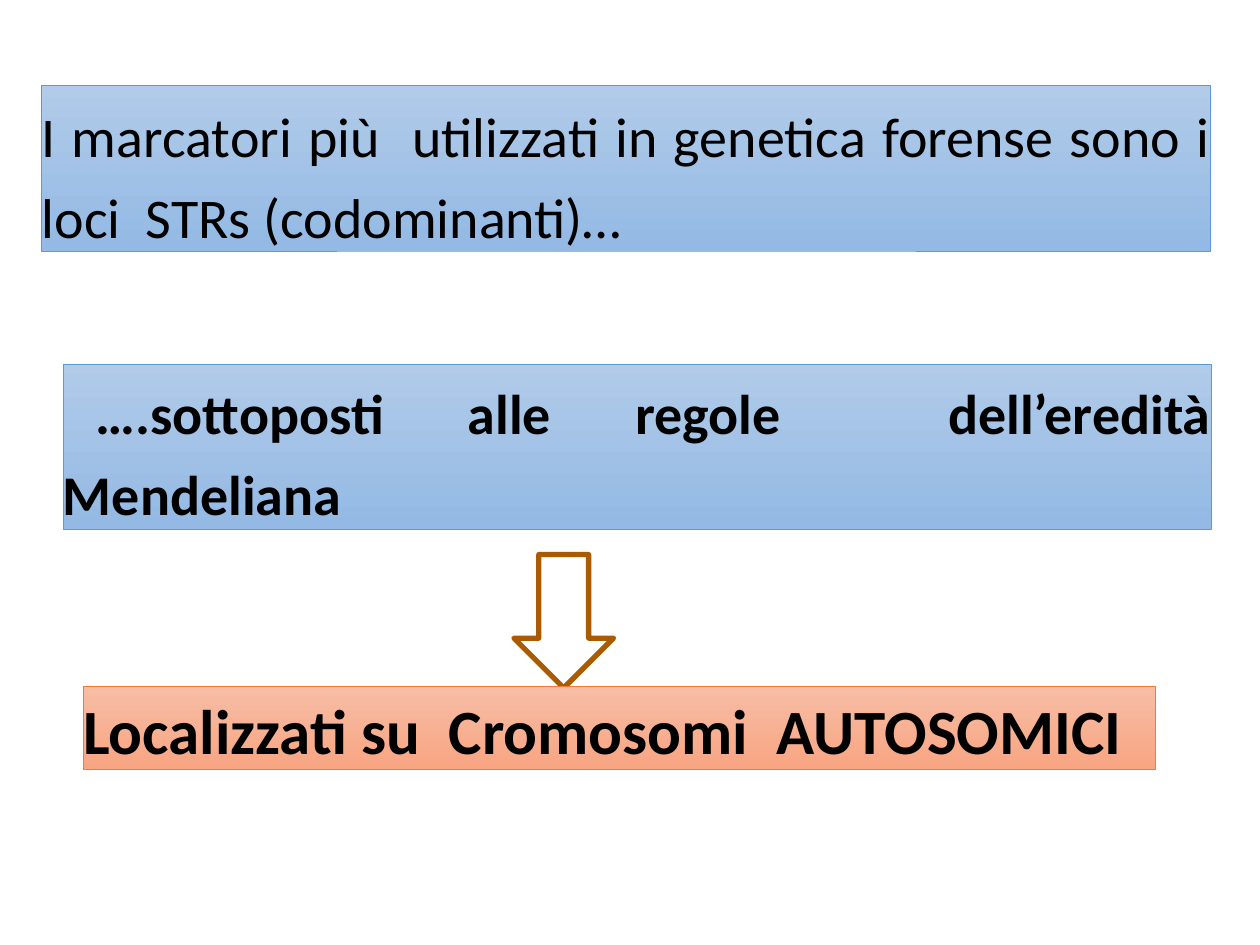
from pptx import Presentation
from pptx.dml.color import RGBColor
from pptx.enum.shapes import MSO_SHAPE
from pptx.enum.text import MSO_ANCHOR, MSO_AUTO_SIZE, PP_ALIGN
from pptx.util import Cm, Pt

BLACK = RGBColor(0x00, 0x00, 0x00)
BLUE_LIGHT = RGBColor(0xB1, 0xCB, 0xE9)
BLUE_DARK = RGBColor(0x93, 0xB9, 0xE4)
BLUE_LINE = RGBColor(0x5B, 0x9B, 0xD5)
ORANGE_LIGHT = RGBColor(0xF7, 0xBD, 0xA5)
ORANGE_DARK = RGBColor(0xF8, 0xA5, 0x82)
ORANGE_LINE = RGBColor(0xED, 0x7D, 0x31)
BROWN = RGBColor(0xAA, 0x5B, 0x02)
BLUE = (BLUE_LIGHT, BLUE_DARK, BLUE_LINE)
ORANGE = (ORANGE_LIGHT, ORANGE_DARK, ORANGE_LINE)


def place(shape, left, top, width, height):
    """Position and size a shape in centimetres."""
    shape.left, shape.top = Cm(left), Cm(top)
    shape.width, shape.height = Cm(width), Cm(height)


def style_box(shape, colors):
    """Give a box a vertical gradient and a thin outline."""
    light, dark, outline = colors
    shape.fill.gradient()
    shape.fill.gradient_angle = 270
    for stop, color in zip(shape.fill.gradient_stops, (light, dark)):
        stop.color.rgb = color
    shape.line.color.rgb = outline
    shape.line.width = Pt(0.5)


def write_text(shape, text, size, bold, anchor, inset_top=0.03):
    """Write justified text into a box and return its paragraph."""
    frame = shape.text_frame
    frame.word_wrap = True
    frame.auto_size = MSO_AUTO_SIZE.SHAPE_TO_FIT_TEXT
    frame.vertical_anchor = anchor
    frame.margin_left = frame.margin_right = frame.margin_bottom = Cm(0)
    frame.margin_top = Cm(inset_top)
    paragraph = frame.paragraphs[0]
    paragraph.alignment = PP_ALIGN.JUSTIFY
    run = paragraph.add_run()
    run.text = text
    run.font.name = "Calibri"
    run.font.size = Pt(size)
    run.font.bold = bold
    run.font.color.rgb = BLACK
    return paragraph


def space_lines(paragraph, indent=0):
    """Open up the lines of a paragraph and indent its first line."""
    paragraph.line_spacing = 1.2
    paragraph.space_before = Pt(1)
    paragraph._p.get_or_add_pPr().set("indent", str(Cm(indent)))


def add_title(slide):
    """Format the title placeholder as the first blue box."""
    title = slide.shapes.title
    place(title, 0.84, 1.73, 23.57, 3.33)
    style_box(title, BLUE)
    text = "I marcatori più  utilizzati in genetica forense sono i loci  STRs (codominanti)…"
    space_lines(write_text(title, text, 32, False, MSO_ANCHOR.MIDDLE))


def add_box(slide, position, colors):
    """Add an empty coloured text box."""
    box = slide.shapes.add_textbox(*map(Cm, position))
    style_box(box, colors)
    return box


def add_arrow(slide):
    """Add the outlined down arrow."""
    arrow = slide.shapes.add_shape(
        MSO_SHAPE.DOWN_ARROW, Cm(10.36), Cm(11.18), Cm(2.01), Cm(2.69))
    arrow.shadow.inherit = False
    arrow.fill.background()
    arrow.line.color.rgb = BROWN
    arrow.line.width = Pt(3)


def main():
    """Build the slide and save it."""
    presentation = Presentation()
    presentation.slide_width, presentation.slide_height = Cm(25.4), Cm(19.05)
    slide = presentation.slides.add_slide(presentation.slide_layouts[5])
    add_title(slide)
    inheritance = add_box(slide, (1.27, 7.34, 23.16, 3.33), BLUE)
    space_lines(write_text(
        inheritance, "….sottoposti alle regole  dell’eredità Mendeliana",
        32, True, MSO_ANCHOR.TOP), indent=0.66)
    add_arrow(slide)
    location = add_box(slide, (1.68, 13.84, 21.62, 1.68), ORANGE)
    write_text(location, "Localizzati su  Cromosomi  AUTOSOMICI",
               36, True, MSO_ANCHOR.TOP, inset_top=0.1)
    presentation.save("out.pptx")


if __name__ == "__main__":
    main()
